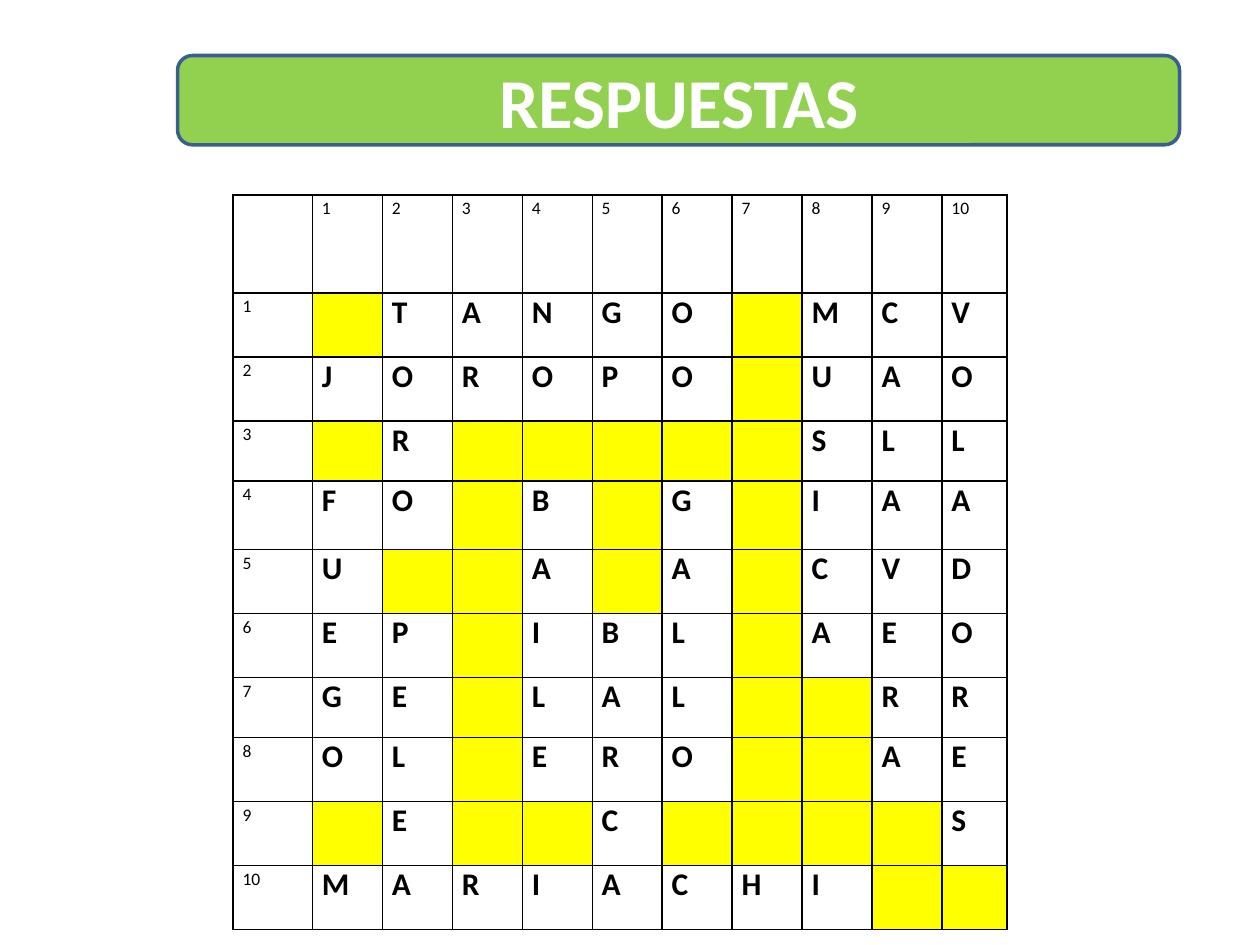
from dataclasses import dataclass

from lxml.etree import SubElement
from pptx import Presentation
from pptx.dml.color import RGBColor as Rgb
from pptx.enum.shapes import MSO_SHAPE as Form
from pptx.enum.text import MSO_ANCHOR as Anchor, PP_ALIGN as Align
from pptx.oxml import parse_xml
from pptx.oxml.ns import nsdecls, qn
from pptx.util import Cm, Pt


@dataclass(frozen=True)
class Theme:
    """Colours, type sizes and font of the slide."""
    font: str = "Calibri"
    white: str = "FFFFFF"
    black: str = "000000"
    green: str = "92D050"
    blue: str = "3A5F8C"
    yellow: str = "FFFF00"
    title: int = 40
    letter: int = 18
    number: int = 10


THEME = Theme()
BLOCK = "."
ANSWERS = (
    ".TANGO.MCV",
    "JOROPO.UAO",
    ".R.....SLL",
    "FO.B.G.IAA",
    "U..A.A.CVD",
    "EP.IBL.AEO",
    "GE.LAL..RR",
    "OL.ERO..AE",
    ".E..C....S",
    "MARIACHI..",
)
WIDTHS = [1.6] + [1.41] * 9 + [1.31]
HEIGHTS = [1.98, 1.29, 1.29, 1.21, 1.38, 1.29, 1.29, 1.21, 1.29, 1.29, 1.29]


def write(frame, text, size, color=THEME.black, bold=False, align=Align.LEFT, lead=1.0):
    """Put one formatted line into a text frame."""
    para = frame.paragraphs[0]
    para.alignment = align
    para.line_spacing = lead
    run = para.add_run()
    run.text = text
    run.font.name = THEME.font
    run.font.size = Pt(size)
    run.font.bold = bold
    run.font.color.rgb = Rgb.from_string(color)


def paint(item, color):
    """Fill a shape or cell with one colour."""
    item.fill.solid()
    item.fill.fore_color.rgb = Rgb.from_string(color)


def frame_cell(cell):
    """Draw a thin line on all four sides of a cell."""
    props = cell._tc.get_or_add_tcPr()
    for spot, side in enumerate("LRTB"):
        line = parse_xml(f'<a:ln{side} {nsdecls("a")} w="{Pt(1)}"/>')
        fill = SubElement(line, qn("a:solidFill"))
        SubElement(fill, qn("a:srgbClr")).set("val", THEME.black)
        props.insert(spot, line)


def add_banner(slide, left, top, width, height):
    """Place the rounded title banner in its box."""
    banner = slide.shapes.add_shape(
        Form.ROUNDED_RECTANGLE, Cm(left), Cm(top), Cm(width), Cm(height))
    banner.shadow.inherit = False
    paint(banner, THEME.green)
    banner.line.color.rgb = Rgb.from_string(THEME.blue)
    banner.line.width = Pt(2)
    banner.text_frame.vertical_anchor = Anchor.MIDDLE
    write(banner.text_frame, "RESPUESTAS", THEME.title, color=THEME.white,
          bold=True, align=Align.CENTER)


def fill_cell(cell, row, col):
    """Give a cell its number, letter or yellow block."""
    cell.margin_left = cell.margin_right = Cm(0.19)
    cell.margin_top = cell.margin_bottom = 0
    paint(cell, THEME.white)
    frame_cell(cell)
    if row and col:
        mark = ANSWERS[row - 1][col - 1]
        if mark == BLOCK:
            paint(cell, THEME.yellow)
        else:
            write(cell.text_frame, mark, THEME.letter, bold=True)
    elif row or col:
        write(cell.text_frame, str(row or col), THEME.number, lead=1.15)


def add_puzzle(slide, left, top):
    """Place the solved crossword from its top left corner."""
    table = slide.shapes.add_table(
        len(HEIGHTS), len(WIDTHS), Cm(left), Cm(top),
        Cm(sum(WIDTHS)), Cm(sum(HEIGHTS))).table
    table.first_row = table.horz_banding = False
    for column, width in zip(table.columns, WIDTHS):
        column.width = Cm(width)
    for row, height in enumerate(HEIGHTS):
        table.rows[row].height = Cm(height)
        for col in range(len(WIDTHS)):
            fill_cell(table.cell(row, col), row, col)


def main():
    """Build the answer slide and save it."""
    deck = Presentation()
    deck.slide_width, deck.slide_height = Cm(25.4), Cm(19.05)
    slide = deck.slides.add_slide(deck.slide_layouts[6])
    add_banner(slide, 3.58, 1.12, 20.2, 1.8)
    add_puzzle(slide, 4.7, 3.93)
    deck.save("out.pptx")


if __name__ == "__main__":
    main()
